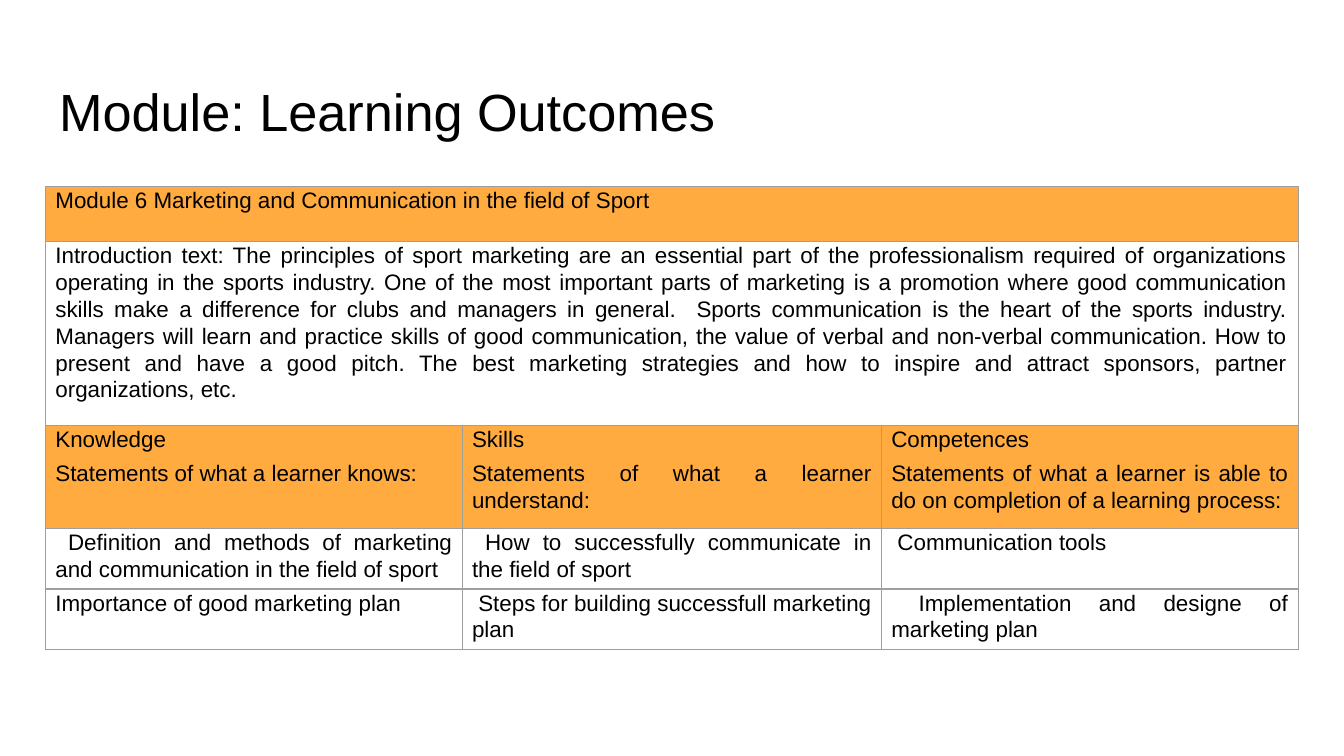
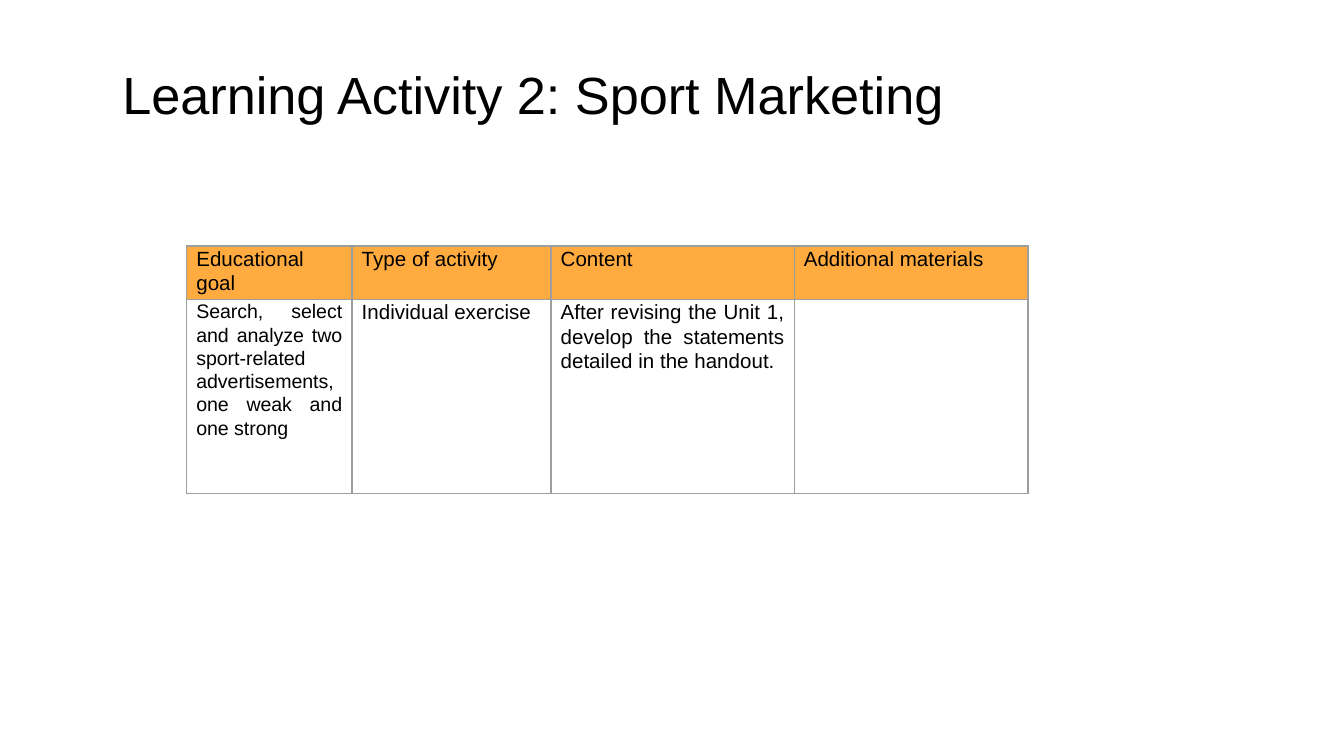
from dataclasses import dataclass
from typing import NamedTuple

from lxml.etree import SubElement
from pptx import Presentation
from pptx.dml.color import RGBColor
from pptx.enum.text import MSO_ANCHOR, MSO_AUTO_SIZE, PP_ALIGN
from pptx.oxml.ns import qn
from pptx.util import Pt


@dataclass(frozen=True)
class Theme:
    font: str = "Arial"
    text: RGBColor = RGBColor(0, 0, 0)
    header: RGBColor = RGBColor(0xFF, 0xAB, 0x40)
    border: RGBColor = RGBColor(0x9E, 0x9E, 0x9E)
    border_width: float = 0.75
    title_size: float = 28
    outcome_size: float = 12
    activity_size: float = 11
    goal_size: float = 10.5
    line_spacing: float = 1.07
    title_inset: float = 7.2
    cell_inset: float = 5.2


THEME = Theme()
TITLE_ONLY = 5


class Box(NamedTuple):
    left: float
    top: float
    width: float
    height: float


OUTCOME_INTRO = (
    "Introduction text: The principles of sport marketing are an essential part of the "
    "professionalism required of organizations operating in the sports industry. One of the "
    "most important parts of marketing is a promotion where good communication skills make a "
    "difference for clubs and managers in general.  Sports communication is the heart of the "
    "sports industry. Managers will learn and practice skills of good communication, the value "
    "of verbal and non-verbal communication. How to present and have a good pitch. The best "
    "marketing strategies and how to inspire and attract sponsors, partner organizations, etc."
)
OUTCOME_ROWS = [
    ["Module 6 Marketing and Communication in the field of Sport"],
    [OUTCOME_INTRO],
    ["Knowledge\nStatements of what a learner knows:",
     "Skills\nStatements of what a learner understand:",
     "Competences\nStatements of what a learner is able to do on completion of a "
     "learning process:"],
    [" Definition and methods of marketing and communication in the field of sport",
     " How to successfully communicate in the field of sport",
     " Communication tools"],
    ["Importance of good marketing plan",
     " Steps for building successfull marketing plan",
     " Implementation and designe of marketing plan"],
]
ACTIVITY_ROWS = [
    ["Educational goal", "Type of activity", "Content", "Additional materials"],
    ["Search, select and analyze two sport-related advertisements, one weak and one strong",
     "Individual exercise",
     "After revising the Unit 1, develop the statements detailed in the handout.",
     ""],
]


def style_font(para, size):
    para.font.name = THEME.font
    para.font.size = Pt(size)
    para.font.bold = False
    para.font.color.rgb = THEME.text


def add_page(deck, title, box):
    page = deck.slides.add_slide(deck.slide_layouts[TITLE_ONLY])
    holder = page.shapes.title
    holder.left, holder.top, holder.width, holder.height = map(Pt, box)
    frame = holder.text_frame
    frame.text = title
    frame.word_wrap = True
    frame.auto_size = MSO_AUTO_SIZE.NONE
    frame.vertical_anchor = MSO_ANCHOR.TOP
    frame.margin_left = frame.margin_right = Pt(THEME.title_inset)
    frame.margin_top = frame.margin_bottom = Pt(THEME.title_inset)
    para = frame.paragraphs[0]
    para.alignment = PP_ALIGN.LEFT
    style_font(para, THEME.title_size)
    return page


def draw_borders(cell):
    properties = cell._tc.get_or_add_tcPr()
    for side in ("lnL", "lnR", "lnT", "lnB"):
        line = SubElement(properties, qn(f"a:{side}"), w=str(Pt(THEME.border_width)))
        fill = SubElement(line, qn("a:solidFill"))
        SubElement(fill, qn("a:srgbClr"), val=str(THEME.border))


def style_cell(cell, is_header):
    draw_borders(cell)
    cell.margin_left = cell.margin_right = Pt(THEME.cell_inset)
    cell.margin_top = cell.margin_bottom = 0
    cell.vertical_anchor = MSO_ANCHOR.TOP
    if is_header:
        cell.fill.solid()
        cell.fill.fore_color.rgb = THEME.header
    else:
        cell.fill.background()


def write_cell(cell, text, size, space_after):
    cell.text = text
    for para in cell.text_frame.paragraphs:
        para.alignment = PP_ALIGN.JUSTIFY
        para.line_spacing = THEME.line_spacing
        para.space_after = Pt(space_after)
        style_font(para, size)


def add_grid(page, left, top, widths, heights, rows, header_rows, size, space_after):
    """Place a bordered table; a row with a single text spans all columns."""
    table = page.shapes.add_table(
        len(heights), len(widths), Pt(left), Pt(top), Pt(sum(widths)), Pt(sum(heights))
    ).table
    table.first_row = table.horz_banding = False
    for column, width in zip(table.columns, widths):
        column.width = Pt(width)
    for index, (height, texts) in enumerate(zip(heights, rows)):
        table.rows[index].height = Pt(height)
        for cell in table.rows[index].cells:
            style_cell(cell, index in header_rows)
        if len(texts) == 1:
            table.cell(index, 0).merge(table.cell(index, len(widths) - 1))
        for position, text in enumerate(texts):
            write_cell(table.cell(index, position), text, size, space_after)
    return table


def add_outcomes_page(deck):
    page = add_page(deck, "Module: Learning Outcomes", Box(24.5, 35.3, 671, 45.4))
    add_grid(page, 24.5, 100, [223.2, 224.6, 223.2], [29.5, 98.4, 55.4, 32.3, 32.3],
             OUTCOME_ROWS, {0, 2}, THEME.outcome_size, space_after=4)


def add_activity_page(deck):
    page = add_page(deck, "Learning Activity 2: Sport Marketing", Box(58.3, 26, 543.6, 45.4))
    table = add_grid(page, 100, 131.8, [88.6, 106.6, 130.3, 125.3], [28.8, 103.7],
                     ACTIVITY_ROWS, {0}, THEME.activity_size, space_after=8)
    goal, activity = table.cell(1, 0), table.cell(1, 1)
    goal.text_frame.paragraphs[0].font.size = Pt(THEME.goal_size)
    activity.text_frame.paragraphs[0].alignment = PP_ALIGN.LEFT


def main():
    deck = Presentation()
    deck.slide_width, deck.slide_height = Pt(720), Pt(405)
    add_outcomes_page(deck)
    add_activity_page(deck)
    deck.save("out.pptx")


if __name__ == "__main__":
    main()
